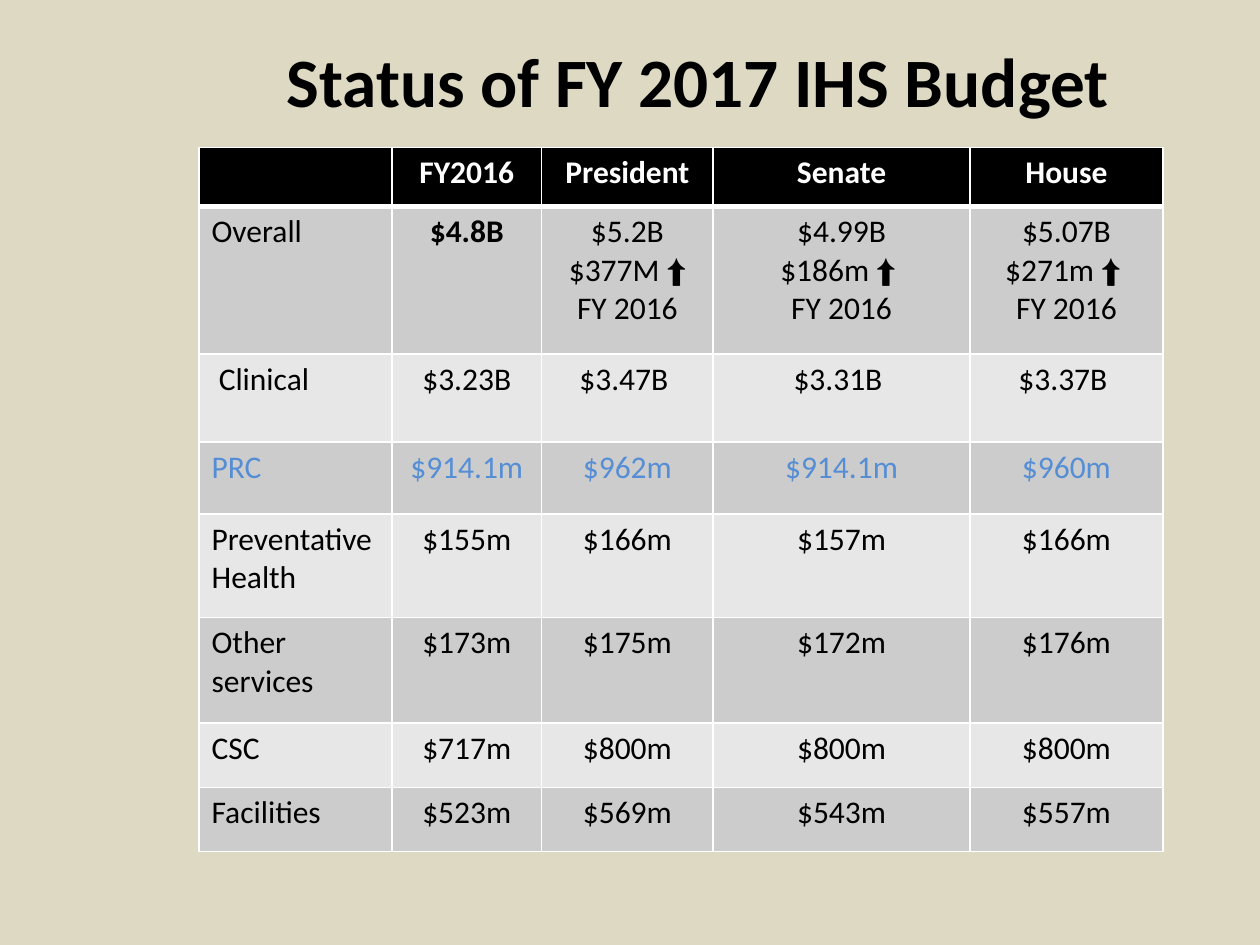
import pptx
import pptx.dml.color
import pptx.enum.text
import pptx.oxml.ns
import pptx.util
import lxml.etree

Inches = pptx.util.Inches
Pt = pptx.util.Pt
CENTER = pptx.enum.text.PP_ALIGN.CENTER
LEFT = pptx.enum.text.PP_ALIGN.LEFT

# Content: a line break starts a new paragraph
TITLE = "Status of FY 2017 IHS Budget"
ROWS = [
    ("", "FY2016", "President", "Senate", "House"),
    ("Overall", "$4.8B", "$5.2B\n$377M ⬆ FY 2016",
     "$4.99B\n$186m ⬆ \nFY 2016", "$5.07B\n$271m ⬆ \nFY 2016"),
    (" Clinical", "$3.23B", "$3.47B ", "$3.31B ", "$3.37B "),
    ("PRC", "$914.1m", "$962m", "$914.1m", "$960m"),
    ("Preventative Health", "$155m", "$166m", "$157m", "$166m"),
    ("Other services", "$173m", "$175m", "$172m", "$176m"),
    ("CSC", "$717m", "$800m", "$800m", "$800m"),
    ("Facilities", "$523m", "$569m", "$543m", "$557m"),
]
ARROW = "⬆"
BOLD_VALUE = "$4.8B"
HIGHLIGHTED_ROW = "PRC"

# Layout in inches
LEFT_EDGE = 1.58
TABLE_TOP = 1.17
COLUMN_WIDTHS = [1.53, 1.19, 1.36, 2.04, 1.53]
ROW_HEIGHTS = [0.47, 1.17, 0.7, 0.57, 0.82, 0.84, 0.51, 0.51]

BLACK, WHITE, BLUE = "000000", "FFFFFF", "558ED5"
BANDS = ["E7E7E7", "CCCCCC"]


def color(value):
    return pptx.dml.color.RGBColor.from_string(value)


def add_run(paragraph, text, size, text_color, bold, font="Calibri"):
    run = paragraph.add_run()
    run.text = text
    run.font.name = font
    run.font.size = Pt(size)
    run.font.bold = bold
    run.font.color.rgb = color(text_color)


def set_borders(cell, widths):
    """Draw white borders; widths are points for left, right, top, bottom."""
    properties = cell._tc.get_or_add_tcPr()
    for side, width in zip("LRTB", widths):
        line = lxml.etree.SubElement(
            properties, pptx.oxml.ns.qn("a:ln" + side), w=str(Pt(width)))
        fill = lxml.etree.SubElement(line, pptx.oxml.ns.qn("a:solidFill"))
        lxml.etree.SubElement(fill, pptx.oxml.ns.qn("a:srgbClr"), val=WHITE)


def fill_cell(cell, text, row, column):
    header = row == 0
    set_borders(cell, (1, 1, 3 if row == 1 else 1, 3 if header else 1))
    cell.fill.solid()
    cell.fill.fore_color.rgb = color(BLACK if header else BANDS[row % 2])
    highlighted = ROWS[row][0] == HIGHLIGHTED_ROW
    text_color = WHITE if header else BLUE if highlighted else BLACK
    bold = header or text == BOLD_VALUE

    frame = cell.text_frame
    for index, line in enumerate(text.split("\n")):
        paragraph = frame.add_paragraph() if index else frame.paragraphs[0]
        paragraph.alignment = CENTER if column else LEFT
        before, arrow, after = line.partition(ARROW)
        for part in (before, arrow, after):
            if part:
                font = "Arial" if part == ARROW else "Calibri"
                add_run(paragraph, part, 18, text_color, bold, font)


def main():
    presentation = pptx.Presentation()
    presentation.slide_width = Inches(10)
    presentation.slide_height = Inches(7.5)
    slide = presentation.slides.add_slide(presentation.slide_layouts[5])
    slide.background.fill.solid()
    slide.background.fill.fore_color.rgb = color("DDD9C3")

    # Title
    title = slide.shapes.title
    title.left, title.top = Inches(LEFT_EDGE), Inches(0.3)
    title.width, title.height = Inches(7.92), Inches(1.25)
    frame = title.text_frame
    frame.word_wrap = True
    frame.auto_size = pptx.enum.text.MSO_AUTO_SIZE.NONE
    frame.vertical_anchor = pptx.enum.text.MSO_ANCHOR.TOP
    frame.margin_top = 0
    frame.paragraphs[0].alignment = CENTER
    add_run(frame.paragraphs[0], TITLE, 39.6, BLACK, True)

    # Budget table
    table = slide.shapes.add_table(
        len(ROWS), len(COLUMN_WIDTHS), Inches(LEFT_EDGE), Inches(TABLE_TOP),
        Inches(sum(COLUMN_WIDTHS)), Inches(sum(ROW_HEIGHTS))).table
    for column, width in zip(table.columns, COLUMN_WIDTHS):
        column.width = Inches(width)
    for row, height in zip(table.rows, ROW_HEIGHTS):
        row.height = Inches(height)
    for row, values in enumerate(ROWS):
        for column, text in enumerate(values):
            fill_cell(table.cell(row, column), text, row, column)

    presentation.save("out.pptx")


if __name__ == "__main__":
    main()
